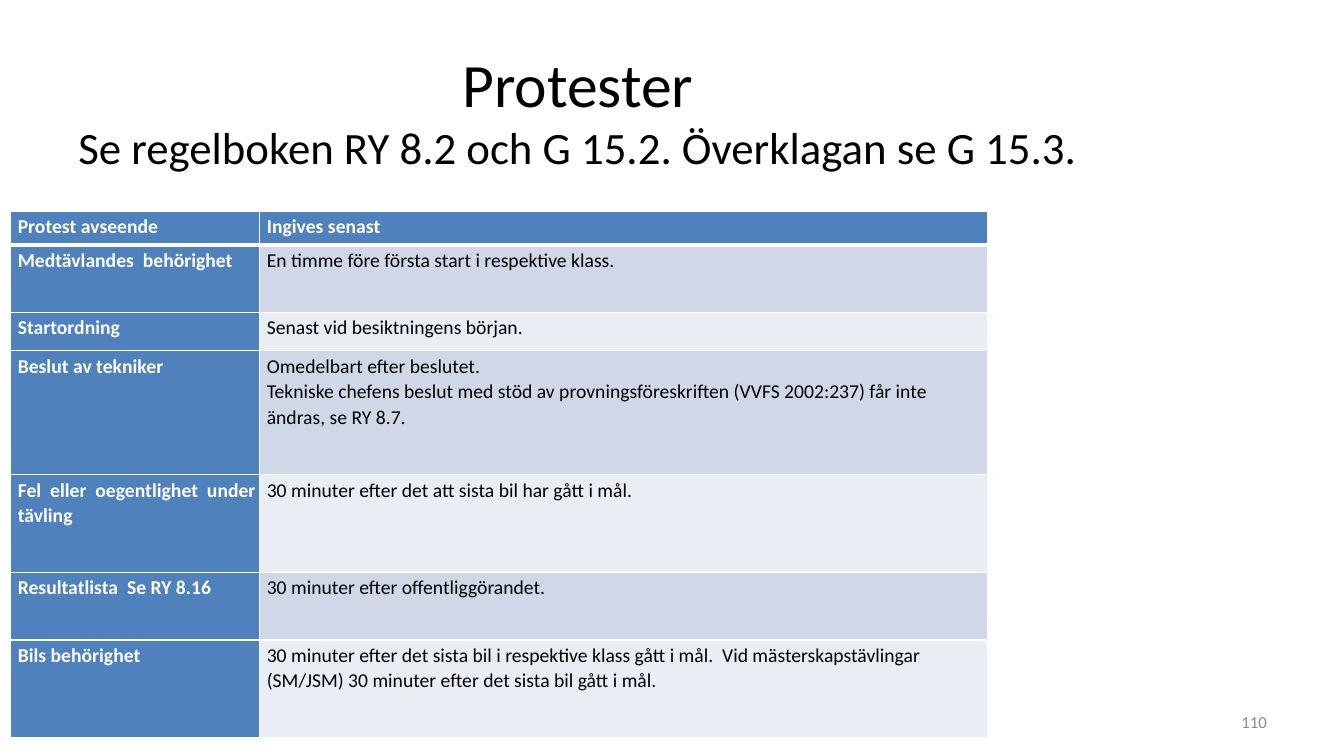
"""Builds a slide on protests: a title, a table of deadlines and a page number."""
import pptx
import pptx.dml.color
import pptx.enum.text
import pptx.oxml
import pptx.oxml.ns
import pptx.util

RGBColor = pptx.dml.color.RGBColor
Align = pptx.enum.text.PP_ALIGN
Anchor = pptx.enum.text.MSO_ANCHOR

BLACK = RGBColor(0x00, 0x00, 0x00)
WHITE = RGBColor(0xFF, 0xFF, 0xFF)
GRAY = RGBColor(0x8C, 0x8C, 0x8C)
BLUE = RGBColor(0x4F, 0x81, 0xBD)
BANDS = (RGBColor(0xE9, 0xED, 0xF4), RGBColor(0xD0, 0xD8, 0xE8))

WIDE, HIGH = pptx.util.Inches(13.33), pptx.util.Inches(7.5)
COLS = (2.47, 7.22)
ROWS = (0.33, 0.67, 0.38, 1.23, 0.97, 0.67, 0.97)
INSETS = {"margin_left": 0.07, "margin_top": 0.02,
          "margin_right": 0.04, "margin_bottom": 0}
TITLE = (("Protester", 44),
         ("Se regelboken RY 8.2 och G 15.2. Överklagan se G 15.3.", 32))
RULES = (
    ("Protest avseende", "Ingives senast"),
    ("Medtävlandes  behörighet",
     "En timme före första start i respektive klass."),
    ("Startordning", "Senast vid besiktningens början."),
    ("Beslut av tekniker",
     "Omedelbart efter beslutet.\nTekniske chefens beslut med stöd av "
     "provningsföreskriften (VVFS 2002:237) får inte ändras, se RY 8.7."),
    ("Fel eller oegentlighet under tävling",
     "30 minuter efter det att sista bil har gått i mål."),
    ("Resultatlista  Se RY 8.16", "30 minuter efter offentliggörandet."),
    ("Bils behörighet",
     "30 minuter efter det sista bil i respektive klass gått i mål.  "
     "Vid mästerskapstävlingar (SM/JSM) 30 minuter efter det sista bil "
     "gått i mål."),
)
JUST = (0, 3, 4)


def style(font, size, color, bold=False):
    """Give a font its face, size, colour and weight."""
    values = {"name": "Calibri", "size": pptx.util.Pt(size), "bold": bold}
    for key, value in values.items():
        setattr(font, key, value)
    font.color.rgb = color


def add_text(slide, share, lines, color, align):
    """Add a text box of sized lines, placed by shares of the slide."""
    x, y, w, h = share
    box = slide.shapes.add_textbox(int(x * WIDE), int(y * HIGH),
                                   int(w * WIDE), int(h * HIGH))
    frame = box.text_frame
    frame.word_wrap = True
    frame.vertical_anchor = Anchor.MIDDLE
    para = frame.paragraphs[0]
    para.alignment = align
    for num, (text, size) in enumerate(lines):
        if num:
            para.add_line_break()
        run = para.add_run()
        run.text = text
        style(run.font, size, color)


def add_edge(cell, side, width):
    """Draw one white border of a cell."""
    line = pptx.oxml.parse_xml(
        f'<a:ln{side} {pptx.oxml.ns.nsdecls("a")} w="{pptx.util.Pt(width)}">'
        f'<a:solidFill><a:srgbClr val="{WHITE}"/></a:solidFill></a:ln{side}>')
    cell._tc.get_or_add_tcPr().append(line)


def fill_cell(cell, text, row, col):
    """Set the words, borders and colours of one cell."""
    head = row == 0 or col == 0
    thick = {0: "B", 1: "T"}.get(row)
    for side in "LRTB":
        add_edge(cell, side, 3 if side == thick else 1)
    cell.fill.solid()
    cell.fill.fore_color.rgb = BLUE if head else BANDS[row % 2]
    for key, value in INSETS.items():
        setattr(cell, key, pptx.util.Inches(value))
    cell.text = text
    for para in cell.text_frame.paragraphs:
        para.line_spacing = 1.07
        para.alignment = (Align.JUSTIFY if col == 0 and row in JUST
                          else Align.LEFT)
        for run in para.runs:
            style(run.font, 14, WHITE if head else BLACK, head)


def add_rules(slide, left, top):
    """Add the table of protests and their deadlines."""
    inch = pptx.util.Inches
    table = slide.shapes.add_table(
        len(ROWS), len(COLS), int(left * WIDE), int(top * HIGH),
        inch(sum(COLS)), inch(sum(ROWS))).table
    for col, width in zip(table.columns, COLS):
        col.width = inch(width)
    for row, height in zip(table.rows, ROWS):
        row.height = inch(height)
    for row, texts in enumerate(RULES):
        for col, text in enumerate(texts):
            fill_cell(table.cell(row, col), text, row, col)


def main():
    """Build the slide and save it."""
    deck = pptx.Presentation()
    deck.slide_width, deck.slide_height = WIDE, HIGH
    slide = deck.slides.add_slide(deck.slide_layouts[6])
    add_text(slide, (0, 0.05, 0.86, 0.19), TITLE, BLACK, Align.CENTER)
    add_rules(slide, 0.008, 0.28)
    add_text(slide, (0.72, 0.93, 0.23, 0.05), (("110", 12),), GRAY,
             Align.RIGHT)
    deck.save("out.pptx")


if __name__ == "__main__":
    main()
